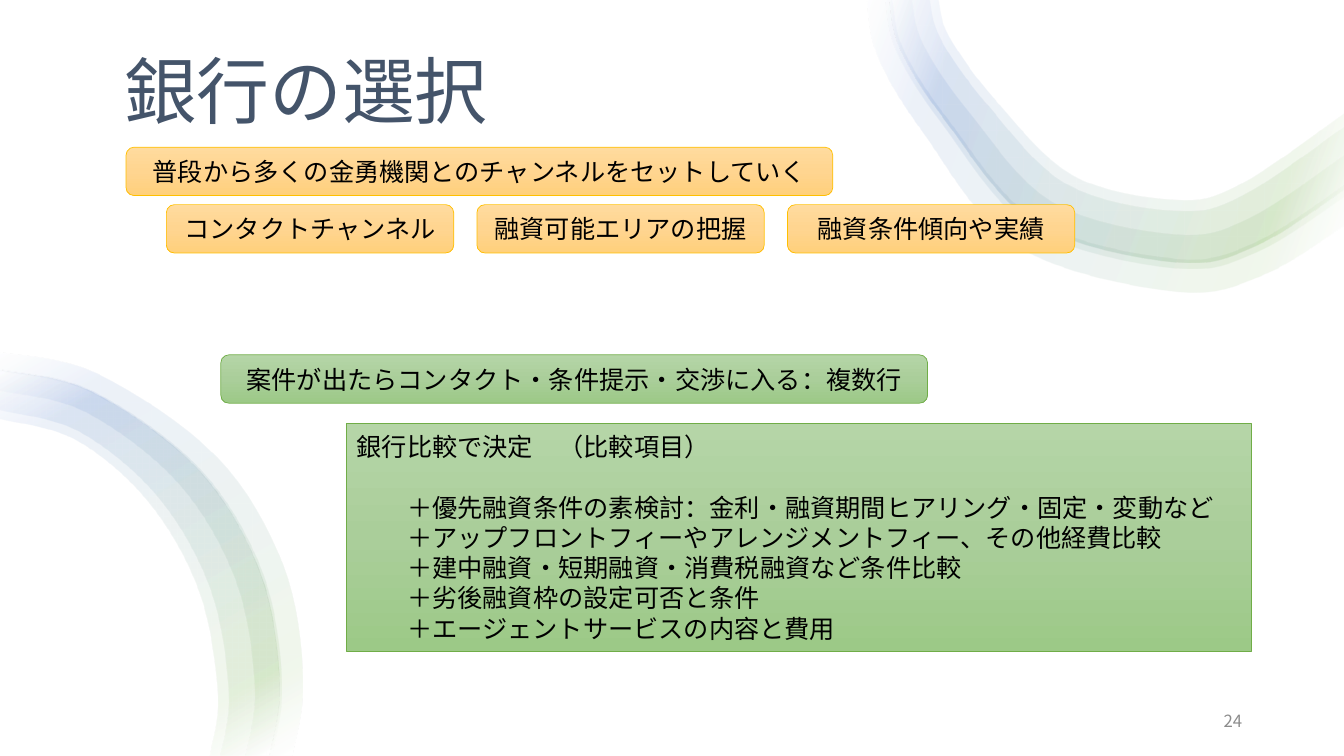
"""Build the bank selection slide with its ribbon decoration."""
from lxml import etree
from pptx import Presentation
from pptx.dml.color import RGBColor
from pptx.enum.shapes import MSO_SHAPE
from pptx.enum.text import MSO_ANCHOR, PP_ALIGN
from pptx.oxml.ns import qn
from pptx.util import Inches, Pt

ROUNDED, RECTANGLE = MSO_SHAPE.ROUNDED_RECTANGLE, MSO_SHAPE.RECTANGLE
LEFT, CENTER, RIGHT = PP_ALIGN.LEFT, PP_ALIGN.CENTER, PP_ALIGN.RIGHT
MIDDLE, BOTTOM = MSO_ANCHOR.MIDDLE, MSO_ANCHOR.BOTTOM
FONT = "Noto Sans CJK JP"
COLORS = {
    "title": "44546A", "text": "000000", "number": "8C8C8C",
    "white": "FFFFFF", "green": "70AD47", "blue": "4472C4", "orange": "FFC000",
    "orange_top": "FFDB9E", "orange_middle": "FFD590", "orange_bottom": "FFD07C",
    "green_top": "B5D5A7", "green_middle": "AACE9A", "green_bottom": "9CC987",
}
RIBBON_STOPS = [(2, "white"), (16, "green"), (85, "blue"), (100, "white")]


def fill_gradient(shape, stops, angle, opacity=100):
    """Fill a shape with a linear gradient and remove its shadow."""
    shape.shadow.inherit = False
    shape.fill.gradient()
    gradient = shape.element.spPr.find(qn("a:gradFill"))
    for child in list(gradient):
        gradient.remove(child)
    stop_list = etree.SubElement(gradient, qn("a:gsLst"))
    for position, color in stops:
        stop = etree.SubElement(stop_list, qn("a:gs"), pos=str(position * 1000))
        rgb = etree.SubElement(stop, qn("a:srgbClr"), val=COLORS[color])
        if opacity < 100:
            etree.SubElement(rgb, qn("a:alpha"), val=str(opacity * 1000))
    etree.SubElement(gradient, qn("a:lin"), ang=str(angle * 60000), scaled="0")


def write_text(shape, text, size, color, align, anchor):
    """Write text into a shape and format every run."""
    frame = shape.text_frame
    frame.text = text
    frame.word_wrap = True
    frame.vertical_anchor = anchor
    for paragraph in frame.paragraphs:
        paragraph.alignment = align
        for run in paragraph.runs:
            run.font.size = Pt(size)
            run.font.name = FONT
            run.font.color.rgb = RGBColor.from_string(COLORS[color])
            etree.SubElement(run.font._element, qn("a:ea"), typeface=FONT)


presentation = Presentation()
presentation.slide_width = Inches(13.33)
presentation.slide_height = Inches(7.5)
slide = presentation.slides.add_slide(presentation.slide_layouts[6])

top_outer = [(8.6, 0), (8.71, 0.56), (9.15, 1.3), (10.09, 2.44), (11.66, 2.89),
             (12.53, 2.72), (13.33, 2.23)]
top_inner = [(9.31, 0), (9.42, 0.37), (9.88, 1), (10.64, 1.74), (11.64, 1.98),
             (12.29, 1.83), (13.33, 1.12)]
left_outer = [(0, 3.5), (0.96, 3.71), (2.14, 4.53), (2.8, 5.6), (3, 6.73), (2.89, 7.5)]
left_inner = [(0, 4.16), (0.76, 4.37), (1.48, 4.99), (1.98, 5.88), (2.16, 6.89), (2.08, 7.5)]
swooshes = [
    (200, top_outer, top_inner, [(0, 0.36), (0.26, 0.63), (0.32, 0.88), (0.32, 1)]),
    (240, left_outer, left_inner, [(0.27, 1), (0.27, 0.87), (0.25, 0.57), (0, 0.28)]),
]
for angle, outer, inner, bands in swooshes:
    for band in bands:
        sides = [[tuple(a + share * (b - a) for a, b in zip(*pair))
                  for pair in zip(outer, inner)] for share in band]
        outline = []
        for edge in (sides[0], sides[1][::-1]):
            outline.append(edge[0])
            padded = [edge[0], *edge, edge[-1]]
            for knots in zip(padded, padded[1:], padded[2:], padded[3:]):
                for step in range(1, 9):
                    t = step / 8
                    outline.append(tuple(
                        b + 0.5 * t * (c - a + t * (2 * a - 5 * b + 4 * c - d
                                                    + t * (3 * b - 3 * c + d - a)))
                        for a, b, c, d in zip(*knots)))
        points = [(Inches(x), Inches(y)) for x, y in outline]
        builder = slide.shapes.build_freeform(*points[0])
        builder.add_line_segments(points[1:], close=True)
        ribbon = builder.convert_to_shape()
        fill_gradient(ribbon, RIBBON_STOPS, angle, opacity=10)
        ribbon.line.fill.background()

title = slide.shapes.add_textbox(Inches(0.62), Inches(0.47), Inches(4.83), Inches(0.91))
write_text(title, "銀行の選択", 52, "title", CENTER, BOTTOM)
title.text_frame.paragraphs[0].line_spacing = 0.9

number = slide.shapes.add_textbox(Inches(9.42), Inches(6.95), Inches(3), Inches(0.4))
write_text(number, "24", 12, "number", RIGHT, MIDDLE)
number.text_frame.paragraphs[0].space_after = Pt(6)

comparison = "\n".join([
    "銀行比較で決定　（比較項目）",
    "＋優先融資条件の素検討：金利・融資期間ヒアリング・固定・変動など",
    "＋アップフロントフィーやアレンジメントフィー、その他経費比較",
    "＋建中融資・短期融資・消費税融資など条件比較",
    "＋劣後融資枠の設定可否と条件",
    "＋エージェントサービスの内容と費用",
])
channels = ["コンタクトチャンネル", "融資可能エリアの把握", "融資条件傾向や実績"]
boxes = [(ROUNDED, 1.25, 1.46, 7.01, 0.48, "orange", CENTER,
          "普段から多くの金勇機関とのチャンネルをセットしていく")]
boxes += [(ROUNDED, 1.65 + 3.08 * column, 2.03, 2.85, 0.48, "orange", CENTER, channel)
          for column, channel in enumerate(channels)]
boxes += [
    (ROUNDED, 2.19, 3.52, 7.01, 0.48, "green", CENTER,
     "案件が出たらコンタクト・条件提示・交渉に入る：複数行"),
    (RECTANGLE, 3.44, 4.2, 8.97, 2.26, "green", LEFT, comparison),
]
for kind, left, top, width, height, color, align, text in boxes:
    box = slide.shapes.add_shape(kind, Inches(left), Inches(top), Inches(width), Inches(height))
    stops = [(0, f"{color}_top"), (50, f"{color}_middle"), (100, f"{color}_bottom")]
    fill_gradient(box, stops, 90)
    box.line.color.rgb = RGBColor.from_string(COLORS[color])
    box.line.width = Pt(0.5)
    write_text(box, text, 18, "text", align, MIDDLE)

criteria = box.text_frame.paragraphs[1:]
for paragraph in criteria:
    paragraph._p.get_or_add_pPr().set("marL", str(Inches(0.5)))
criteria[0].space_before = Pt(21.6)

presentation.save("out.pptx")
